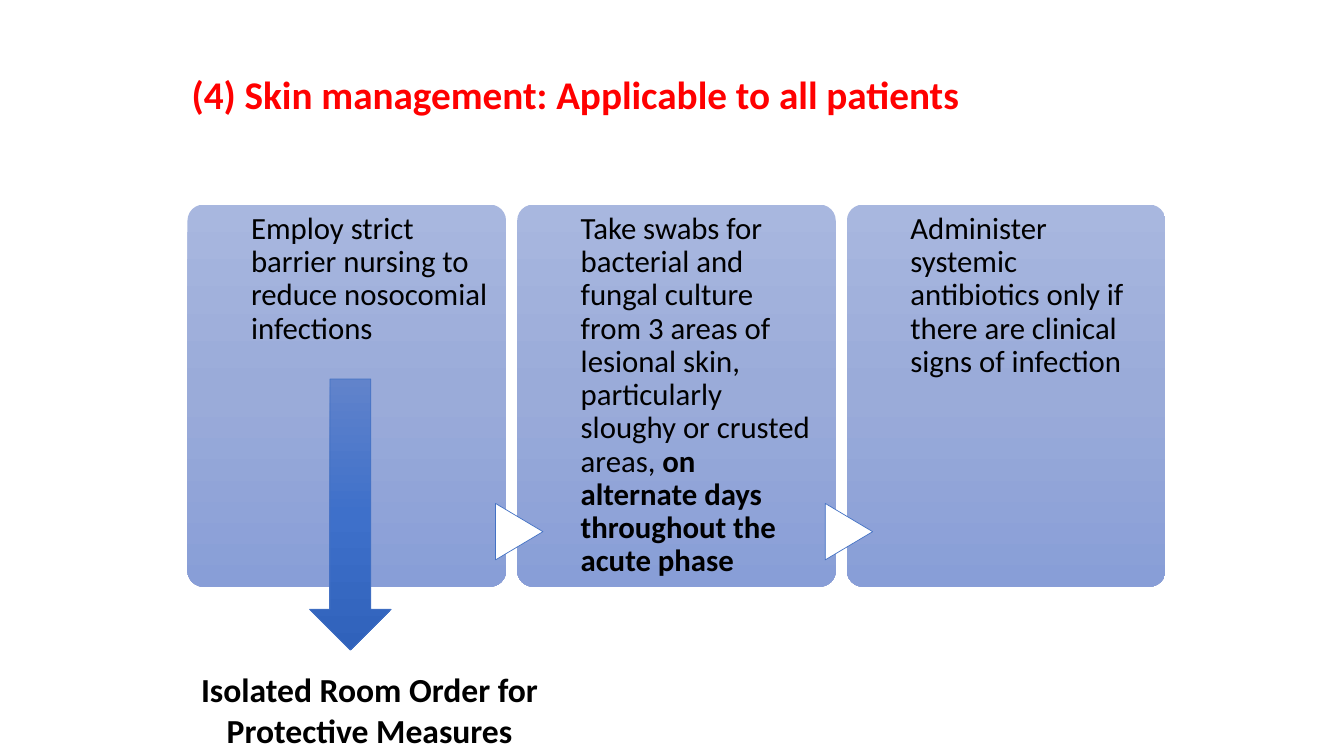
"""Build the skin management slide with three linked steps."""
from copy import deepcopy

from pptx import Presentation
from pptx.dml.color import RGBColor
from pptx.enum.shapes import MSO_SHAPE
from pptx.enum.text import MSO_ANCHOR, PP_ALIGN
from pptx.oxml.ns import qn
from pptx.util import Inches, Pt

COLORS = {
    "title": "FF0000",
    "text": "000000",
    "white": "FFFFFF",
    "line": "4472C4",
    "panel": ["A8B7DF", "9AABD9", "889ED7"],
    "arrow": ["6183CB", "3E70CA", "3062BB"],
}
STEPS = [
    ("Employ strict barrier nursing to reduce nosocomial infections", ""),
    ("Take swabs for bacterial and fungal culture from 3 areas of lesional skin, "
     "particularly sloughy or crusted areas, ",
     "on alternate days throughout the acute phase"),
    ("Administer systemic antibiotics only if there are clinical signs of infection", ""),
]
PANEL_LEFT, PANEL_TOP, PANEL_W, PANEL_H, PITCH = 1.86, 2.03, 3.16, 3.79, 3.27


def add_run(p, text, size=22, color="text", bold=False):
    r = p.add_run()
    r.text = text
    r.font.name = "Calibri"
    r.font.size = Pt(size)
    r.font.bold = bold
    r.font.color.rgb = RGBColor.from_string(COLORS[color])


def add_block(kind, left, top, width, height, fill, line=None):
    sp = slide.shapes.add_shape(kind, Inches(left), Inches(top), Inches(width), Inches(height))
    sp.shadow.inherit = False
    if isinstance(COLORS[fill], list):
        sp.fill.gradient()
        sp.fill.gradient_angle = 270
        stop_list = sp._element.spPr.find(qn("a:gradFill")).find(qn("a:gsLst"))
        stop_list.insert(1, deepcopy(stop_list[0]))
        for stop, position, color in zip(sp.fill.gradient_stops, (0, 0.5, 1), COLORS[fill]):
            stop.position = position
            stop.color.rgb = RGBColor.from_string(color)
    else:
        sp.fill.solid()
        sp.fill.fore_color.rgb = RGBColor.from_string(COLORS[fill])
    if line:
        sp.line.color.rgb = RGBColor.from_string(COLORS[line])
        sp.line.width = Pt(0.5)
    else:
        sp.line.fill.background()
    return sp


prs = Presentation()
prs.slide_width, prs.slide_height = Inches(13.33), Inches(7.5)
slide = prs.slides.add_slide(prs.slide_layouts[5])

title = slide.shapes.title
title.left, title.top, title.width, title.height = Inches(1.8), Inches(0.65), Inches(7.92), Inches(0.57)
tf = title.text_frame
tf.word_wrap = False
tf.vertical_anchor = MSO_ANCHOR.TOP
p = tf.paragraphs[0]
p.alignment = PP_ALIGN.LEFT
add_run(p, "(4) Skin management: Applicable to all patients", size=28, color="title", bold=True)

for i, (plain, strong) in enumerate(STEPS):
    left = PANEL_LEFT + i * PITCH
    panel = add_block(MSO_SHAPE.ROUNDED_RECTANGLE, left, PANEL_TOP, PANEL_W, PANEL_H, "panel")
    panel.adjustments[0] = 0.05
    if i:
        pointer = add_block(MSO_SHAPE.FLOWCHART_EXTRACT, left - 0.26, 5.04, 0.56, 0.47, "white", "line")
        pointer.rotation = 90
    box = slide.shapes.add_textbox(Inches(left + 0.63), Inches(PANEL_TOP), Inches(2.35), Inches(PANEL_H))
    tf = box.text_frame
    tf.word_wrap = True
    tf.margin_left = tf.margin_right = tf.margin_bottom = 0
    tf.margin_top = Inches(0.08)
    p = tf.paragraphs[0]
    p.line_spacing = 0.9
    add_run(p, plain)
    if strong:
        add_run(p, strong, bold=True)

add_block(MSO_SHAPE.DOWN_ARROW, 3.07, 3.76, 0.81, 2.69, "arrow", "line")

order = slide.shapes.add_textbox(Inches(1.69), Inches(6.59), Inches(3.95), Inches(0.91))
tf = order.text_frame
tf.word_wrap = True
p = tf.paragraphs[0]
p.alignment = PP_ALIGN.CENTER
add_run(p, "Isolated Room Order for Protective Measures", size=24, bold=True)

prs.save("out.pptx")
